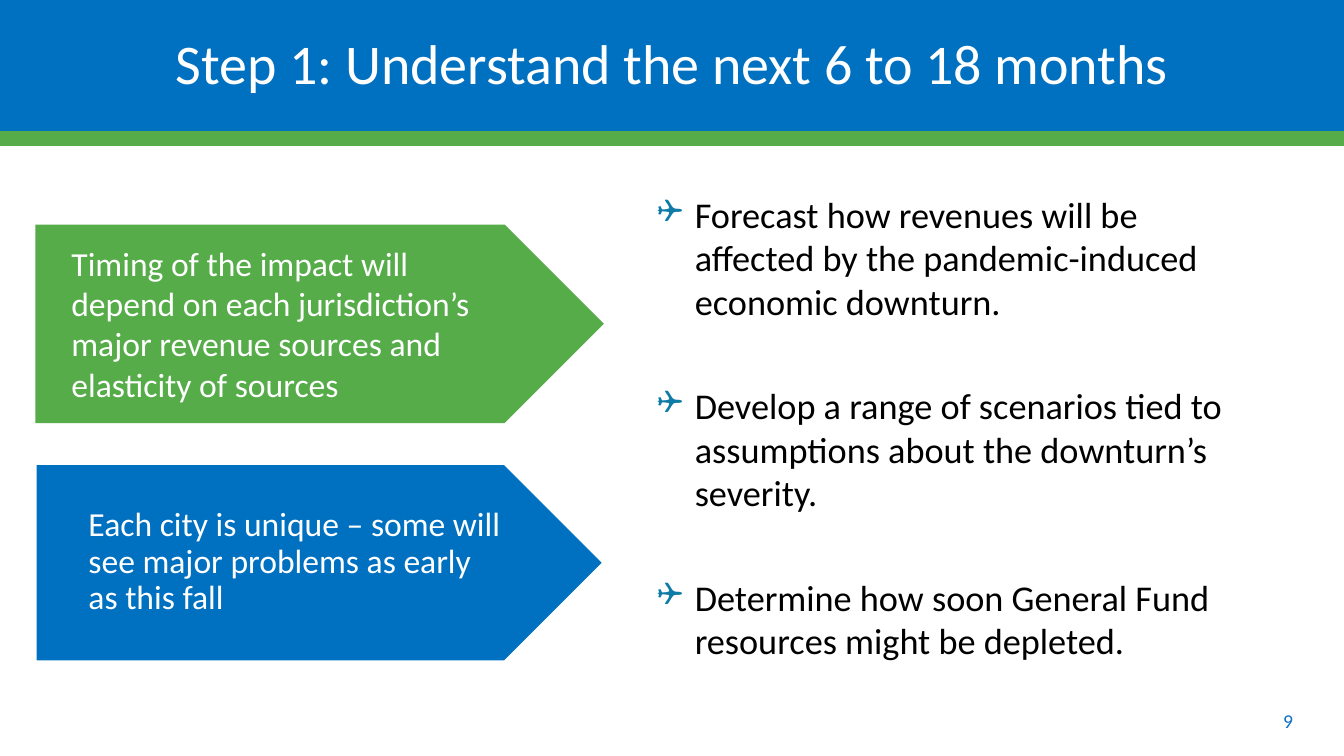
from dataclasses import dataclass

from lxml import etree
from pptx import Presentation
from pptx.dml.color import RGBColor
from pptx.enum.shapes import MSO_SHAPE
from pptx.enum.text import MSO_ANCHOR, PP_ALIGN
from pptx.oxml.ns import qn
from pptx.util import Cm, Pt

RECT = MSO_SHAPE.RECTANGLE
ARROW = MSO_SHAPE.PENTAGON
MIDDLE = MSO_ANCHOR.MIDDLE
TOP = MSO_ANCHOR.TOP
LEFT = PP_ALIGN.LEFT
CENTER = PP_ALIGN.CENTER


@dataclass(frozen=True)
class Theme:
    font: str = "Calibri"
    blue: str = "0070C0"
    green: str = "56AC49"
    white: str = "FFFFFF"
    black: str = "000000"
    mark: str = "0F7CA7"
    number: str = "0F6FC6"
    title_size: float = 40
    list_size: float = 25.9
    label_size: float = 24
    number_size: float = 14


class Painter:
    def __init__(self, slide, theme):
        self.slide = slide
        self.theme = theme

    def shape(self, kind, box, color, line=None):
        shape = self.slide.shapes.add_shape(kind, *map(Cm, box))
        shape.shadow.inherit = False
        shape.fill.solid()
        shape.fill.fore_color.rgb = RGBColor.from_string(color)
        if line:
            shape.line.color.rgb = RGBColor.from_string(line)
            shape.line.width = Pt(2)
        else:
            shape.line.fill.background()
        return shape

    def style(self, para, text, size, color, align=LEFT, spacing=1.0):
        para.text = text
        para.alignment = align
        para.line_spacing = spacing
        para.font.name = self.theme.font
        para.font.size = Pt(size)
        para.font.color.rgb = RGBColor.from_string(color)

    def frame(self, box, anchor):
        frame = self.slide.shapes.add_textbox(*map(Cm, box)).text_frame
        frame.word_wrap = True
        frame.vertical_anchor = anchor
        return frame

    def text(self, box, text, size, color, align=LEFT, anchor=TOP, spacing=1.0):
        para = self.frame(box, anchor).paragraphs[0]
        self.style(para, text, size, color, align, spacing)

    def title(self, box, text):
        frame = self.shape(RECT, box, self.theme.blue).text_frame
        frame.word_wrap = True
        frame.vertical_anchor = MIDDLE
        frame.margin_top = Cm(0.25)
        self.style(frame.paragraphs[0], text, self.theme.title_size,
                   self.theme.white, CENTER, 0.9)

    def bullet(self, para):
        props = para._p.get_or_add_pPr()
        props.set("marL", str(Cm(0.95)))
        props.set("indent", str(-Cm(0.95)))
        color = etree.SubElement(props, qn("a:buClr"))
        etree.SubElement(color, qn("a:srgbClr"), val=self.theme.mark)
        etree.SubElement(props, qn("a:buSzPct"), val="90000")
        etree.SubElement(props, qn("a:buFont"), typeface="Wingdings")
        etree.SubElement(props, qn("a:buChar"), char="❑")

    def checklist(self, box, items):
        frame = self.frame(box, MIDDLE)
        for index, item in enumerate(items):
            para = frame.add_paragraph() if index else frame.paragraphs[0]
            self.bullet(para)
            self.style(para, item, self.theme.list_size, self.theme.black)
            if index:
                para.space_before = Pt(43.6)


def main():
    deck = Presentation()
    deck.slide_width, deck.slide_height = Cm(33.87), Cm(19.05)
    theme = Theme()
    page = Painter(deck.slides.add_slide(deck.slide_layouts[6]), theme)

    page.shape(RECT, (0, 3.3, 33.87, 0.38), theme.green)
    page.text((31.19, 17.65, 2.54, 1.02), "9", theme.number_size,
              theme.number, CENTER, MIDDLE)
    page.title((0, -0.08, 33.87, 3.38), "Step 1: Understand the next 6 to 18 months")
    page.checklist((16.31, 4.27, 15.8, 12.98), [
        "Forecast how revenues will be affected by the pandemic-induced economic downturn.",
        "Develop a range of scenarios tied to assumptions about the downturn’s severity.",
        "Determine how soon General Fund resources might be depleted.",
    ])

    page.shape(ARROW, (0.89, 5.66, 14.33, 5), theme.green)
    page.shape(ARROW, (0.89, 11.68, 14.33, 5), theme.blue, theme.white)
    page.text((1.55, 5.99, 11.43, 4.37),
              "Timing of the impact will depend on each jurisdiction’s "
              "major revenue sources and elasticity of sources",
              theme.label_size, theme.white)
    page.text((1.98, 12.67, 11, 3.02),
              "Each city is unique – some will see major problems as early as this fall",
              theme.label_size, theme.white, spacing=0.9)

    deck.save("out.pptx")


if __name__ == "__main__":
    main()
